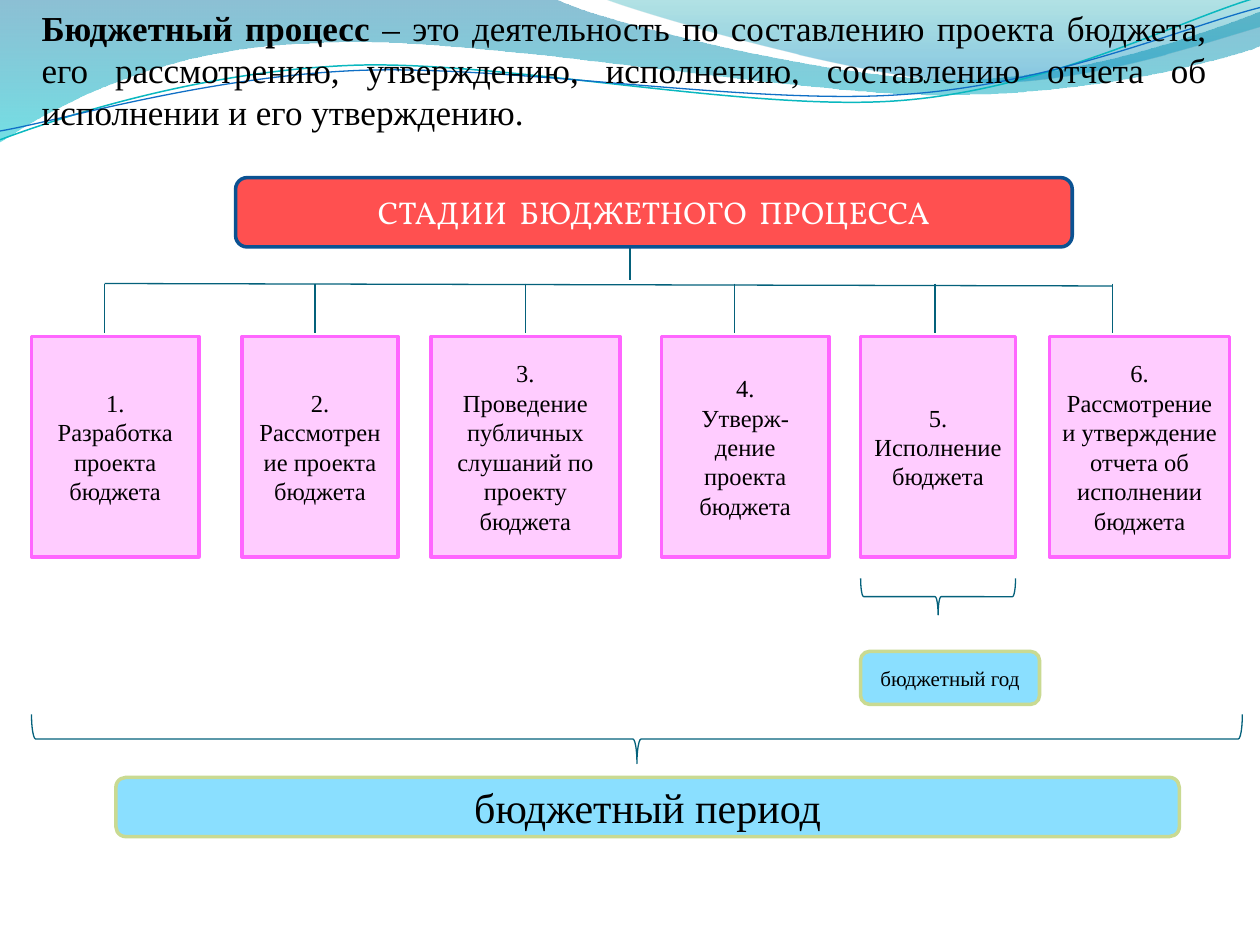
from dataclasses import dataclass

from lxml import etree
from pptx import Presentation
from pptx.dml.color import RGBColor
from pptx.enum import shapes, text
from pptx.oxml.ns import qn
from pptx.util import Inches, Pt


@dataclass(frozen=True)
class Theme:
    line: str = "04617B"
    ink: str = "000000"
    white: str = "FFFFFF"
    header: str = "FF5050"
    header_edge: str = "0B5292"
    stage: str = "FFCCFF"
    stage_edge: str = "FF66FF"
    period: str = "8ADFFF"
    period_edge: str = "C9DA92"
    crest_teal: str = "0AB8BF"
    crest_blue: str = "0F6FC6"
    font: str = "Times New Roman"
    header_font: str = "Vollkorn"
    title_pt: int = 20
    header_pt: int = 18
    stage_pt: int = 14
    year_pt: int = 12
    period_pt: int = 24
    thin: float = 0.75
    thick: float = 2


@dataclass(frozen=True)
class Stage:
    left: float
    width: float
    drop: float  # x of the line that leads to the box
    lines: tuple[str, ...]


@dataclass(frozen=True)
class Stop:
    color: str
    position: float
    alpha: int


T = Theme()
RECT = shapes.MSO_SHAPE.RECTANGLE
ROUND = shapes.MSO_SHAPE.ROUNDED_RECTANGLE
BRACE = shapes.MSO_SHAPE.RIGHT_BRACE
STAGE_TOP, STAGE_H = 2.67, 1.75
RAIL_Y, DROP_H = 2.25, 0.39

STAGES = [
    Stage(0.25, 1.33, 0.83, ("1.", "Разработка проекта бюджета")),
    Stage(1.92, 1.24, 2.5, ("2. Рассмотрение проекта бюджета",)),
    Stage(3.42, 1.5, 4.17, ("3.", "Проведение публичных слушаний по проекту бюджета")),
    Stage(5.25, 1.33, 5.83, ("4.", "Утверж-дение проекта бюджета")),
    Stage(6.83, 1.23, 7.42, ("5. Исполнение бюджета",)),
    Stage(8.33, 1.43, 8.83, ("6. Рассмотрение и утверждение отчета об исполнении бюджета",)),
]

# Waves: a start point, then line ends (2 numbers) or cubic curves (6 numbers)
WAVE_WIDE = [(0, 0), (4.4, -0.01), (4.76, 0.17, 6.64, 0.63, 7.58, 0.63),
             (8.53, 0.63, 9.58, 0.26, 10, 0.09), (10.01, 0.36),
             (9.83, 0.44, 8.7, 0.76, 7.46, 0.75), (6.22, 0.75, 3.82, 0.28, 2.57, 0.34),
             (1.29, 0.36, 0.46, 0.83, -0.01, 1.13)]
WAVE_RIGHT = [(4.79, -0.01), (5.09, 0.11, 6.82, 0.62, 7.69, 0.65),
              (8.56, 0.69, 9.61, 0.32, 10, 0.21), (10, 0)]
CREST_TEAL = [(0, 1.11), (0.48, 0.93, 1.58, 0.57, 2.77, 0.52),
              (3.95, 0.47, 5.93, 0.89, 7.13, 0.8), (8.33, 0.71, 9.38, 0.15, 9.98, -0.02)]
CREST_BLUE = [(0, 1.04), (0.47, 0.96, 1.64, 0.61, 2.83, 0.56),
              (4.03, 0.51, 5.97, 0.84, 7.17, 0.75), (8.36, 0.67, 9.41, 0.21, 10, 0.06)]


def rgb(color: str) -> RGBColor:
    return RGBColor.from_string(color)


def set_line(sp, color: str, width: float) -> None:
    sp.line.color.rgb = rgb(color)
    sp.line.width = Pt(width)


def add_text(p, words: str, *, size: float, font: str = T.font,
             color: str = T.ink, bold: bool = False) -> None:
    r = p.add_run()
    r.text = words
    r.font.name, r.font.size, r.font.bold = font, Pt(size), bold
    r.font.color.rgb = rgb(color)


def add_box(s, kind, at: tuple, lines: tuple[str, ...], fill: str, edge: str, **fmt) -> None:
    sp = s.shapes.add_shape(kind, *map(Inches, at))
    sp.shadow.inherit = False
    sp.fill.solid()
    sp.fill.fore_color.rgb = rgb(fill)
    set_line(sp, edge, T.thick)
    tf = sp.text_frame
    tf.word_wrap = True
    tf.vertical_anchor = text.MSO_ANCHOR.MIDDLE
    for i, words in enumerate(lines):
        p = tf.add_paragraph() if i else tf.paragraphs[0]
        p.alignment = text.PP_ALIGN.CENTER
        add_text(p, words, **fmt)


def add_line(s, x1: float, y1: float, x2: float, y2: float) -> None:
    sp = s.shapes.add_connector(shapes.MSO_CONNECTOR.STRAIGHT, *map(Inches, (x1, y1, x2, y2)))
    set_line(sp, T.line, T.thin)
    etree.SubElement(sp._element.spPr, qn("a:effectLst"))


def add_brace(s, left: float, top: float, width: float, height: float) -> None:
    """Place a brace that opens upward; it is a right brace turned by 90 degrees."""
    x, y = left + (width - height) / 2, top + (height - width) / 2
    sp = s.shapes.add_shape(BRACE, *map(Inches, (x, y, height, width)))
    sp.rotation = 90
    sp.shadow.inherit = False
    sp.fill.background()
    set_line(sp, T.line, T.thin)


def add_path(s, segments: list[tuple], closed: bool):
    """Build an outline from all points, then join each curve's three points."""
    points = [(Inches(seg[i]), Inches(seg[i + 1]))
              for seg in segments for i in range(0, len(seg), 2)]
    fb = s.shapes.build_freeform(*points[0], scale=1.0)
    fb.add_line_segments(points[1:], close=closed)
    sp = fb.convert_to_shape()
    sp.shadow.inherit = False
    steps = iter(list(sp._element.spPr.iter(qn("a:lnTo"))))
    for seg in segments[1:]:
        first = next(steps)
        if len(seg) == 6:
            first.tag = qn("a:cubicBezTo")
            for step in (next(steps), next(steps)):
                first.append(step[0])
                step.getparent().remove(step)
    return sp


def add_wave(s, segments: list[tuple], stops: tuple[Stop, Stop]) -> None:
    sp = add_path(s, segments, True)
    sp.line.fill.background()
    sp.fill.gradient()
    sp.fill.gradient_angle = 270
    for g, stop in zip(sp.fill.gradient_stops, stops):
        g.color.rgb, g.position = rgb(stop.color), stop.position
    for clr, stop in zip(sp._element.spPr.iter(qn("a:srgbClr")), stops):
        etree.SubElement(clr, qn("a:alpha"), val=str(stop.alpha * 1000))


def add_crest(s, segments: list[tuple], color: str, width: float) -> None:
    sp = add_path(s, segments, False)
    sp.fill.background()
    set_line(sp, color, width)


def main() -> None:
    prs = Presentation()
    prs.slide_width, prs.slide_height = Inches(10), Inches(7.5)
    s = prs.slides.add_slide(prs.slide_layouts[5])

    # Wave decoration
    add_wave(s, WAVE_WIDE, (Stop("0074A1", 0, 45), Stop("00C6CF", 1, 55)))
    add_wave(s, WAVE_RIGHT, (Stop("00A1A9", 0, 30), Stop("008BBF", 0.8, 45)))
    add_crest(s, CREST_TEAL, T.crest_teal, 0.85)
    add_crest(s, CREST_BLUE, T.crest_blue, T.thin)

    # Definition, raised above the waves
    title = s.shapes.title
    s.shapes._spTree.append(title._element)
    title.left, title.top, title.width, title.height = map(Inches, (0.23, 0, 9.45, 1.11))
    tf = title.text_frame
    tf.word_wrap = True
    tf.auto_size = text.MSO_AUTO_SIZE.NONE
    tf.vertical_anchor = text.MSO_ANCHOR.TOP
    p = tf.paragraphs[0]
    p.alignment = text.PP_ALIGN.JUSTIFY
    add_text(p, "Бюджетный процесс ", size=T.title_pt, bold=True)
    add_text(p, "– это деятельность по составлению проекта бюджета, его рассмотрению, "
                "утверждению, исполнению, составлению отчета об исполнении и его "
                "утверждению.", size=T.title_pt)

    # Tree lines, header and stages
    add_line(s, 5, 1.83, 5, 2.22)
    add_line(s, STAGES[0].drop, RAIL_Y, STAGES[-1].drop, RAIL_Y + 0.02)
    add_box(s, ROUND, (1.87, 1.41, 6.64, 0.55), ("СТАДИИ  БЮДЖЕТНОГО  ПРОЦЕССА",), T.header,
            T.header_edge, size=T.header_pt, font=T.header_font, color=T.white)
    for st in STAGES:
        add_line(s, st.drop, RAIL_Y, st.drop, RAIL_Y + DROP_H)
        add_box(s, RECT, (st.left, STAGE_TOP, st.width, STAGE_H), st.lines,
                T.stage, T.stage_edge, size=T.stage_pt)

    # Budget year and budget period
    add_brace(s, 6.83, 4.59, 1.23, 0.29)
    add_box(s, ROUND, (6.83, 5.17, 1.42, 0.42), ("бюджетный год",),
            T.period, T.period_edge, size=T.year_pt)
    add_brace(s, 0.25, 5.67, 9.61, 0.39)
    add_box(s, ROUND, (0.92, 6.17, 8.44, 0.47), ("бюджетный период",),
            T.period, T.period_edge, size=T.period_pt)

    prs.save("out.pptx")


if __name__ == "__main__":
    main()
